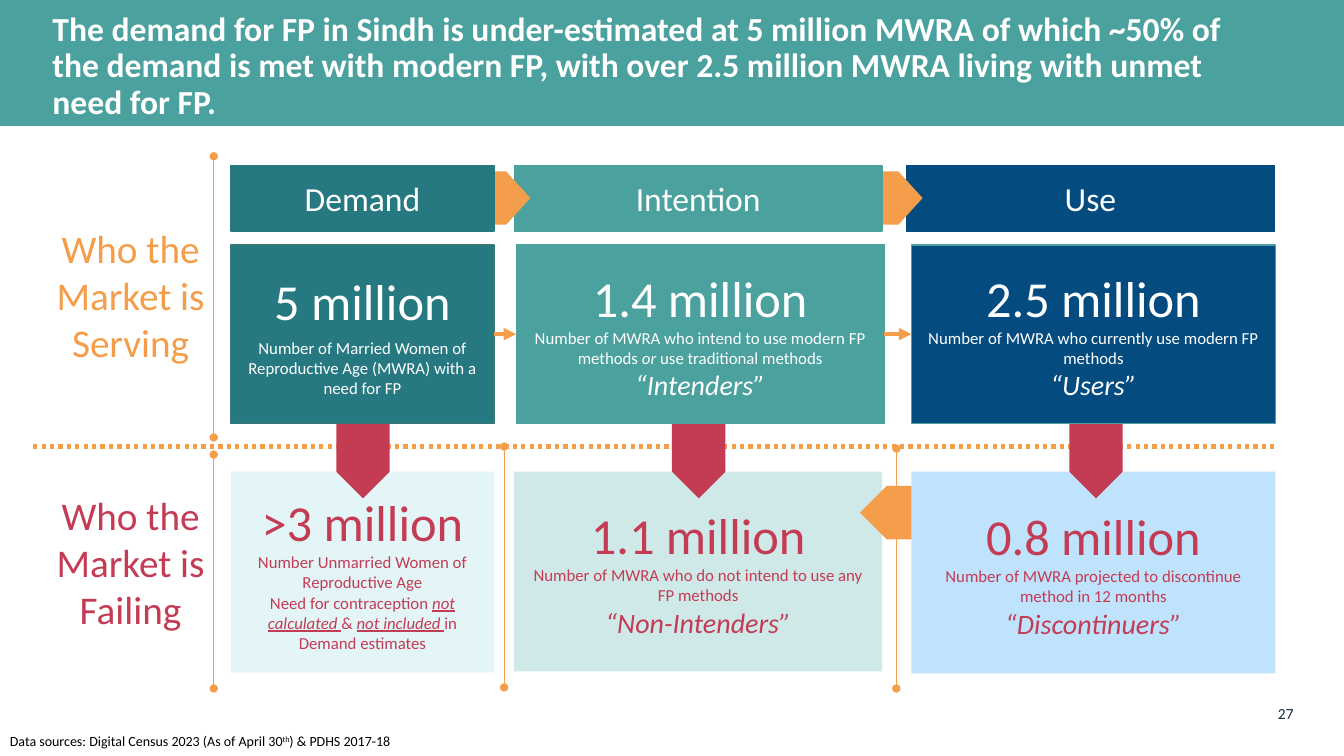
import collections

import pptx
import pptx.dml.color
import pptx.enum.dml
import pptx.enum.shapes
import pptx.enum.text
import pptx.oxml
import pptx.oxml.ns
import pptx.util

PX = 9144
TEAL, DEEP, NAVY = "4AA19E", "267881", "044B7F"
ORANGE, RED, WHITE = "F49E4C", "C33C54", "FFFFFF"
SHAPE = pptx.enum.shapes.MSO_SHAPE
ANCHOR = pptx.enum.text.MSO_ANCHOR
ALIGN = pptx.enum.text.PP_ALIGN
Box = collections.namedtuple("Box", "left top width height")

HEADERS = [("Demand", 0, 261, DEEP), ("Intention", 281, 365, TEAL), ("Use", 670, 365, NAVY)]
ITALIC = {"italic": True}
STRESSED = {"italic": True, "underline": True}
SERVED = [
    (0, 261, DEEP, "377775", "5 million",
     [("Number of Married Women of Reproductive Age (MWRA) with a need for FP", {})], None),
    (283, 365, TEAL, TEAL, "1.4 million",
     [("Number of MWRA who intend to use modern FP methods ", {}), ("or", ITALIC),
      (" use traditional methods", {})], "“Intenders”"),
    (675, 361, NAVY, TEAL, "2.5 million",
     [("Number of MWRA who currently use modern FP methods", {})], "“Users”"),
]
FAILED = [
    (0, 261, 199, 131, "E4F5F7", ">3 million",
     [[("Number Unmarried Women of Reproductive Age", {})],
      [("Need for contraception ", {}), ("not calculated ", STRESSED), ("& ", {}),
       ("not included ", STRESSED), ("in Demand estimates", {})]], None),
    (281, 365, 198, 464, "CFE9E8", "1.1 million",
     [[("Number of MWRA who do not intend to use any FP methods", {})]], "“Non-Intenders”"),
    (675, 361, 200, 858, "BFE2FD", "0.8 million",
     [[("Number of MWRA projected to discontinue method in 12 months", {})]], "“Discontinuers”"),
]


def color(code):
    """Turn a hex string into a colour."""
    return pptx.dml.color.RGBColor.from_string(code)


def apply(target, values):
    """Set each named attribute on the target."""
    for name, value in values.items():
        setattr(target, name, value)


def emu(box):
    """Turn a box in px into EMU lengths."""
    return [length * PX for length in box]


def write(shape, paragraphs, ink, align=ALIGN.CENTER, anchor=ANCHOR.MIDDLE, **frame_format):
    """Fill a shape with paragraphs of (size, spans, format)."""
    frame = shape.text_frame
    apply(frame, {"word_wrap": True, "vertical_anchor": anchor, **frame_format})
    for index, (size, spans, para_format) in enumerate(paragraphs):
        para = frame.add_paragraph() if index else frame.paragraphs[0]
        apply(para, {"alignment": align, **para_format})
        for text, font_format in spans:
            span = para.add_run()
            span.text = text
            apply(span.font, {"name": "Calibri", "size": pptx.util.Pt(size), **font_format})
            span.font.color.rgb = color(ink)


def add_block(page, box, fill, line=None, kind=SHAPE.RECTANGLE, rotation=0):
    """Add a flat filled shape."""
    block = page.shapes.add_shape(kind, *emu(box))
    apply(block, {"rotation": rotation})
    block.shadow.inherit = False
    block.fill.solid()
    block.fill.fore_color.rgb = color(fill)
    if line:
        block.line.color.rgb = color(line)
        block.line.width = pptx.util.Pt(1)
    else:
        block.line.fill.background()
    return block


def add_line(page, start, end, width, head=None, tail=None, dash=None):
    """Add an orange straight connector with optional ends."""
    line = page.shapes.add_connector(
        pptx.enum.shapes.MSO_CONNECTOR.STRAIGHT, *emu(start), *emu(end))
    line.line.color.rgb = color(ORANGE)
    apply(line.line, {"width": pptx.util.Pt(width), "dash_style": dash})
    properties = line.element.spPr
    stroke = properties.find(pptx.oxml.ns.qn("a:ln"))
    namespace = pptx.oxml.ns.nsdecls("a")
    for tag, end_type in (("headEnd", head), ("tailEnd", tail)):
        if end_type:
            stroke.append(pptx.oxml.parse_xml(f'<a:{tag} {namespace} type="{end_type}"/>'))
    properties.append(pptx.oxml.parse_xml(f"<a:effectLst {namespace}/>"))
    return line


def add_divider(page, x, top, bottom):
    """Add a thin upright line with round ends."""
    add_line(page, (x, top), (x, bottom), 0.5, "oval", "oval")


def title_band(page, box):
    """Place the title on its coloured band."""
    title = page.shapes.title
    band = add_block(page, box, TEAL)
    title.element.addprevious(band.element)
    place = Box(box.left + 42, box.top + 8, box.width - 100, box.height - 8)
    apply(title, dict(zip(place._fields, emu(place))))
    text = ("The demand for FP in Sindh is under-estimated at 5 million MWRA of which ~50% of "
            "the demand is met with modern FP, with over 2.5 million MWRA living with unmet "
            "need for FP.")
    write(title, [(24, [(text, {"bold": True})], {"line_spacing": 0.9})], WHITE, ALIGN.LEFT,
          auto_size=pptx.enum.text.MSO_AUTO_SIZE.NONE)


def header_row(page, box):
    """Place the three stage names, each overlapped by the arrow leading to it."""
    for name, offset, width, fill in reversed(HEADERS):
        left = box.left + offset
        header = add_block(page, Box(left, box.top, width, box.height), fill, fill)
        write(header, [(24, [(name, {})], {})], WHITE)
        if offset:
            add_block(page, Box(left - 32, box.top + 6, 48, 53), ORANGE, kind=SHAPE.PENTAGON)


def card_text(number, details, group):
    """List the paragraphs of one card."""
    lines = [(36, [(number, {})], {})] + [(12, spans, {}) for spans in details]
    return lines + ([(20, [(group, ITALIC)], {})] if group else [])


def failing_row(page, box):
    """Place the lower cards with the red arrows that drop into them."""
    for offset, width, height, arrow, fill, number, details, group in FAILED:
        left = box.left + offset
        if group == "“Discontinuers”":
            add_block(page, Box(left - 51, box.top + 14, 74, 53), ORANGE,
                      kind=SHAPE.PENTAGON, rotation=180)
        card = add_block(page, Box(left, box.top, width, height), fill)
        write(card, card_text(number, details, group), RED)
        add_block(page, Box(box.left + arrow - 37, box.top - 37, 74, 53), RED,
                  kind=SHAPE.PENTAGON, rotation=90)


def serving_row(page, box):
    """Place the upper cards and join each to the next."""
    previous = None
    for offset, width, fill, line, number, details, group in SERVED:
        card = add_block(page, Box(box.left + offset, box.top, width, box.height), fill, line)
        lines = card_text(number, [details], group)
        if not group:
            lines[1][2]["space_before"] = pptx.util.Pt(5)
        write(card, lines, WHITE)
        if previous:
            flow = add_line(page, (0, 0), (1, 1), 3, tail="triangle")
            flow.begin_connect(previous, 3)
            flow.end_connect(card, 1)
        previous = card


def row_label(page, box, text, ink):
    """Place the name of a row at its left."""
    write(page.shapes.add_textbox(*emu(box)), [(28, [(text, {})], {})], ink)


def dividers(page):
    """Place the dotted line between rows and the upright lines."""
    add_line(page, (1264, 443), (31, 443), 3, dash=pptx.enum.dml.MSO_LINE.ROUND_DOT)
    for x, top, bottom in ((212, 155, 434), (212, 451, 683), (500, 443, 682), (889, 445, 683)):
        add_divider(page, x, top, bottom)


def footer(page, box):
    """Place the data sources and the page number."""
    sources = page.shapes.add_textbox(*emu(Box(box.left, box.top + 23, 430, 27)))
    spans = [("Data sources: Digital Census 2023 (As of April 30", {}), ("th", {}),
             (") & PDHS 2017-18", {})]
    write(sources, [(10, spans, {})], "000000", ALIGN.LEFT, ANCHOR.TOP, word_wrap=False)
    ordinal = sources.text_frame.paragraphs[0].runs[1]
    ordinal._r.get_or_add_rPr().set("baseline", "30000")
    number = page.shapes.add_textbox(*emu(Box(box.left + box.width - 99, box.top, 49, 20)))
    write(number, [(11, [("27", {})], {})], "112E38", ALIGN.RIGHT, ANCHOR.TOP,
          margin_left=0, margin_right=0, margin_top=0, margin_bottom=0)


def main():
    """Build the deck and save it."""
    deck = pptx.Presentation()
    apply(deck, {"slide_width": 1333 * PX, "slide_height": 750 * PX})
    page = deck.slides.add_slide(deck.slide_layouts[5])
    title_band(page, Box(0, 0, 1333, 125))
    header_row(page, Box(229, 164, 1035, 65))
    dividers(page)
    failing_row(page, Box(229, 468, 1036, 200))
    serving_row(page, Box(229, 243, 1036, 177))
    row_label(page, Box(30, 164, 199, 257), "Who the Market is Serving", ORANGE)
    row_label(page, Box(30, 448, 199, 218), "Who the Market is Failing", RED)
    footer(page, Box(0, 699, 1333, 51))
    deck.save("out.pptx")


if __name__ == "__main__":
    main()
